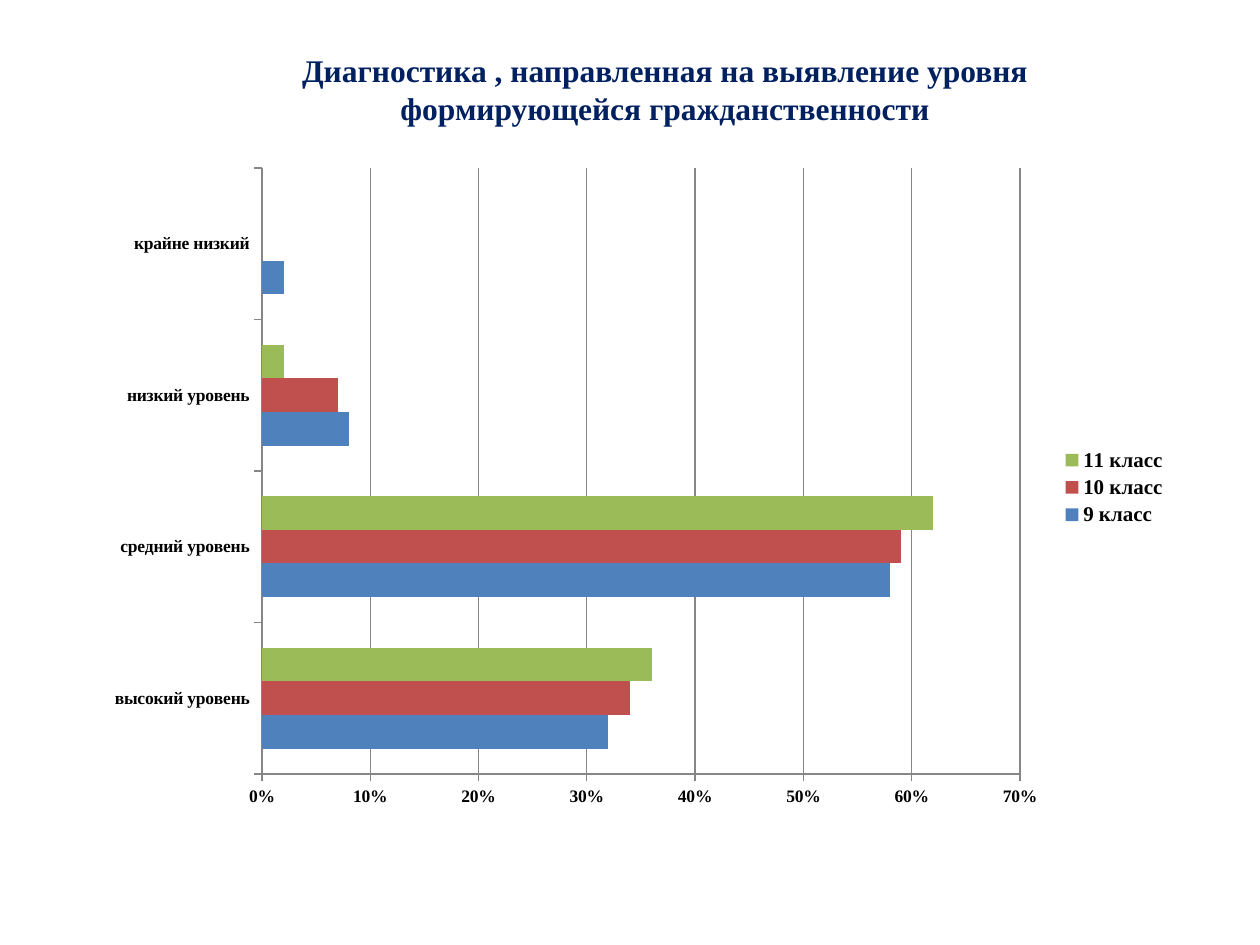
"""Build a slide with a clustered bar chart of civic-mindedness levels by class."""
from dataclasses import dataclass

from lxml import etree
from pptx import Presentation
from pptx import util as u
from pptx.chart import chart as ch
from pptx.chart import data as cd
from pptx.dml import color as dc
from pptx.dml import line as ln
from pptx.enum import chart as ce
from pptx.enum import text
from pptx.oxml import ns
from pptx.text import text as tt

SCALE = 914400 / 126
FACE = "Times New Roman"
GREY = "868686"


@dataclass(frozen=True)
class Box:
    """Hold a rectangle in px."""
    x: int
    y: int
    w: int
    h: int

    def emu(self) -> list[int]:
        """Return the four lengths in EMU."""
        return [px(n) for n in (self.x, self.y, self.w, self.h)]


@dataclass(frozen=True)
class Group:
    """Hold one class and its share at each level."""
    name: str
    vals: tuple[float | None, ...]
    fill: str


TITLE = Box(263, 45, 804, 89)
CHART = Box(89, 155, 1091, 665)
PLOT = Box(262, 168, 758, 606)
LEVELS = ("высокий уровень", "средний уровень", "низкий уровень", "крайне низкий")
GROUPS = (
    Group("9 класс", (0.32, 0.58, 0.08, 0.02), "4F81BD"),
    Group("10 класс", (0.34, 0.59, 0.07, None), "C0504D"),
    Group("11 класс", (0.36, 0.62, 0.02, None), "9BBB59"),
)


def px(n: int) -> int:
    """Turn px into EMU."""
    return round(n * SCALE)


def rgb(code: str) -> dc.RGBColor:
    """Turn a hex string into a colour."""
    return dc.RGBColor.from_string(code)


def style(font: tt.Font, size: int, code: str = "000000", face: str = FACE,
          bold: bool = True) -> None:
    """Set size, colour, face and weight of a font."""
    font.name, font.size, font.bold = face, u.Pt(size), bold
    font.color.rgb = rgb(code)


def rule(line: ln.LineFormat) -> None:
    """Draw a thin grey line."""
    line.color.rgb = rgb(GREY)
    line.width = u.Pt(0.75)


def place(chart: ch.Chart) -> None:
    """Fix the inner plot area within the chart."""
    area = chart._chartSpace.find(".//" + ns.qn("c:plotArea"))
    for old in area.findall(ns.qn("c:layout")):
        area.remove(old)
    lay = etree.Element(ns.qn("c:layout"))
    man = etree.SubElement(lay, ns.qn("c:manualLayout"))
    parts = {
        "layoutTarget": "inner", "xMode": "edge", "yMode": "edge",
        "x": (PLOT.x - CHART.x) / CHART.w, "y": (PLOT.y - CHART.y) / CHART.h,
        "w": PLOT.w / CHART.w, "h": PLOT.h / CHART.h,
    }
    for tag, val in parts.items():
        etree.SubElement(man, ns.qn(f"c:{tag}")).set("val", str(val))
    area.insert(0, lay)


def head(slide) -> None:
    """Fill and move the title."""
    title = slide.shapes.title
    title.left, title.top, title.width, title.height = TITLE.emu()
    frame = title.text_frame
    frame.text = "Диагностика , направленная на выявление уровня формирующейся гражданственности"
    frame.word_wrap = True
    frame.auto_size = text.MSO_AUTO_SIZE.NONE
    frame.vertical_anchor = text.MSO_ANCHOR.TOP
    para = frame.paragraphs[0]
    para.alignment = text.PP_ALIGN.CENTER
    style(para.font, 18, "002060")


def bars(slide) -> None:
    """Add the bar chart with its axes and legend."""
    data = cd.CategoryChartData(number_format="0%")
    data.categories = LEVELS
    for group in GROUPS:
        data.add_series(group.name, group.vals)
    chart = slide.shapes.add_chart(
        ce.XL_CHART_TYPE.BAR_CLUSTERED, *CHART.emu(), data).chart
    chart.has_title = False
    style(chart.font, 18, face="Calibri", bold=False)
    plot = chart.plots[0]
    plot.gap_width, plot.overlap, plot.vary_by_categories = 150, 0, False
    for series, group in zip(plot.series, GROUPS):
        series.format.fill.solid()
        series.format.fill.fore_color.rgb = rgb(group.fill)
        series.invert_if_negative = False
    for axis in (chart.category_axis, chart.value_axis):
        axis.major_tick_mark = ce.XL_TICK_MARK.OUTSIDE
        style(axis.tick_labels.font, 10)
        rule(axis.format.line)
    axis = chart.value_axis
    axis.minimum_scale, axis.maximum_scale, axis.major_unit = 0, 0.7, 0.1
    axis.tick_labels.number_format = "0%"
    axis.tick_labels.number_format_is_linked = False
    axis.has_major_gridlines = True
    rule(axis.major_gridlines.format.line)
    chart.has_legend = True
    chart.legend.position = ce.XL_LEGEND_POSITION.RIGHT
    chart.legend.include_in_layout = False
    style(chart.legend.font, 12)
    place(chart)


def main() -> None:
    """Build and save the deck."""
    deck = Presentation()
    deck.slide_width, deck.slide_height = px(1260), px(945)
    slide = deck.slides.add_slide(deck.slide_layouts[5])
    head(slide)
    bars(slide)
    deck.save("out.pptx")


if __name__ == "__main__":
    main()
